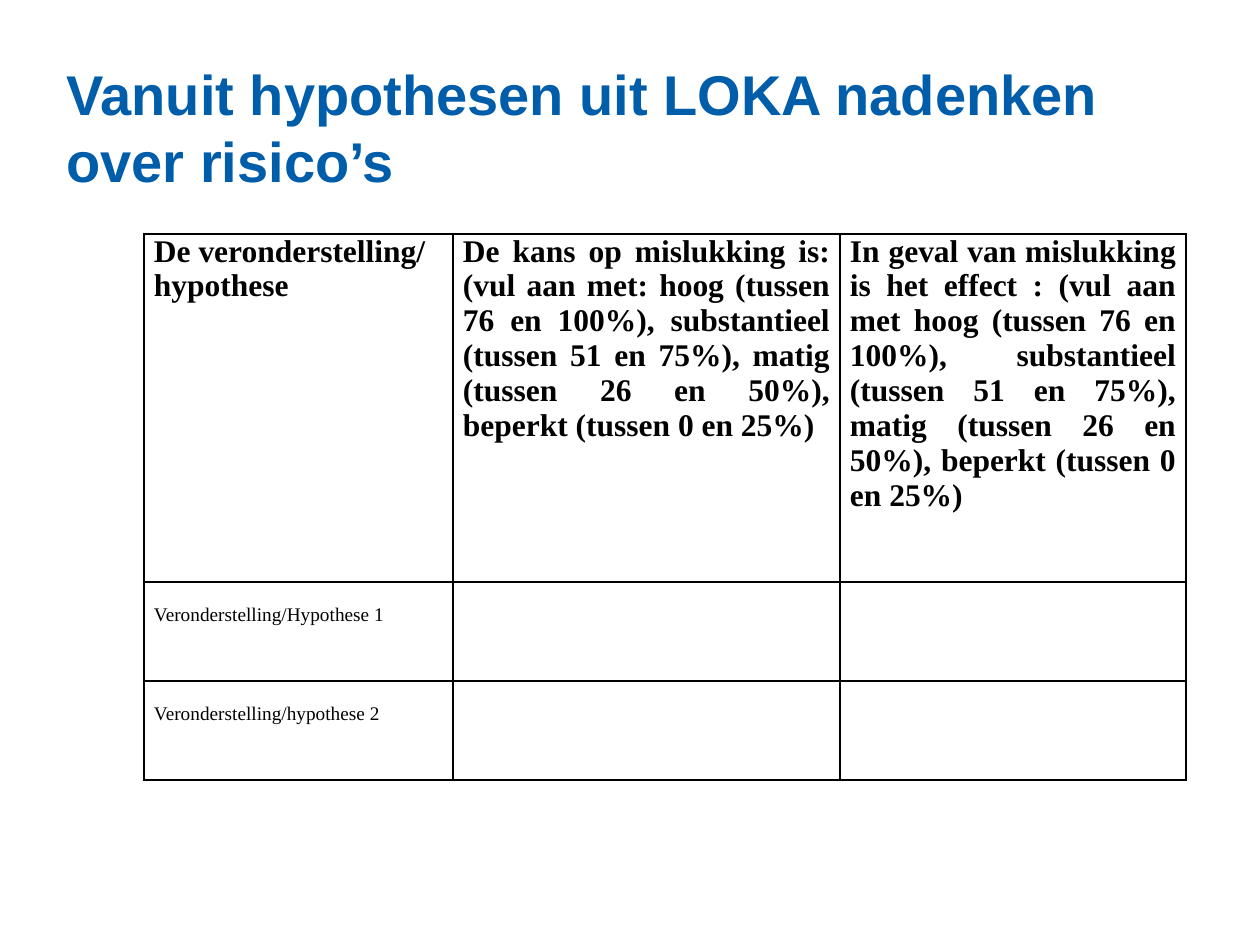
"""Build a slide with a risk table for the hypotheses from LOKA."""
from dataclasses import dataclass

import pptx
import pptx.dml.color
import pptx.enum.text
import pptx.oxml
import pptx.oxml.ns
import pptx.util

EMU_PER_PX = 914400 / 126


@dataclass(frozen=True)
class Theme:
    title_color: str = "005DAA"
    text_color: str = "000000"
    border_color: str = "000000"
    title_font: str = "Arial"
    table_font: str = "Times New Roman"
    title_size: int = 32
    header_size: int = 18
    label_size: int = 11
    border_width: int = 1


@dataclass(frozen=True)
class Row:
    height: int
    cells: tuple[str, ...]
    size: int
    bold: bool = False
    margin_top: int = 0
    align: pptx.enum.text.PP_ALIGN = pptx.enum.text.PP_ALIGN.JUSTIFY


THEME = Theme()
COLUMN_WIDTHS = (309, 387, 346)
CELL_MARGIN = 10
SCALE = (
    "hoog (tussen 76 en 100%), substantieel (tussen 51 en 75%), "
    "matig (tussen 26 en 50%), beperkt (tussen 0 en 25%)"
)
ROWS = (
    Row(348, (
        "De veronderstelling/\nhypothese",
        f"De kans op mislukking is: (vul aan met: {SCALE}",
        f"In geval van mislukking is het effect : (vul aan met {SCALE}",
    ), THEME.header_size, bold=True),
    Row(99, ("Veronderstelling/Hypothese 1", "", ""), THEME.label_size, margin_top=22),
    Row(99, ("Veronderstelling/hypothese 2", "", ""), THEME.label_size, margin_top=22),
)


def px(length: int) -> pptx.util.Emu:
    return pptx.util.Emu(round(length * EMU_PER_PX))


def write_text(frame, text: str, *, font: str, size: int, color: str, bold: bool,
               align=pptx.enum.text.PP_ALIGN.LEFT) -> None:
    for index, line in enumerate(text.split("\n")):
        para = frame.add_paragraph() if index else frame.paragraphs[0]
        para.alignment = align
        para.font.size = pptx.util.Pt(size)
        if not line:
            continue
        span = para.add_run()
        span.text = line
        span.font.name = font
        span.font.size = pptx.util.Pt(size)
        span.font.bold = bold
        span.font.color.rgb = pptx.dml.color.RGBColor.from_string(color)


def set_borders(cell) -> None:
    properties = cell._tc.get_or_add_tcPr()
    namespace = pptx.oxml.ns.nsdecls("a")
    width = pptx.util.Pt(THEME.border_width)
    for position, side in enumerate(("lnL", "lnR", "lnT", "lnB")):
        properties.insert(position, pptx.oxml.parse_xml(
            f'<a:{side} {namespace} w="{width}"><a:solidFill>'
            f'<a:srgbClr val="{THEME.border_color}"/></a:solidFill></a:{side}>'
        ))


def add_title(page, text: str) -> None:
    box = page.shapes.add_textbox(px(54), px(106), px(1184), px(94))
    frame = box.text_frame
    frame.word_wrap = True
    frame.vertical_anchor = pptx.enum.text.MSO_ANCHOR.BOTTOM
    write_text(frame, text, font=THEME.title_font, size=THEME.title_size,
               color=THEME.title_color, bold=True)


def add_risk_table(page, rows: tuple[Row, ...]) -> None:
    shape = page.shapes.add_table(
        len(rows), len(COLUMN_WIDTHS), px(144), px(234),
        px(sum(COLUMN_WIDTHS)), px(sum(row.height for row in rows)),
    )
    table = shape.table
    table.first_row = False
    table.horz_banding = False
    for column, width in zip(table.columns, COLUMN_WIDTHS):
        column.width = px(width)
    for row_index, row in enumerate(rows):
        table.rows[row_index].height = px(row.height)
        for column_index, text in enumerate(row.cells):
            cell = table.cell(row_index, column_index)
            cell.fill.background()
            cell.margin_left = cell.margin_right = px(CELL_MARGIN)
            cell.margin_top = px(row.margin_top)
            cell.margin_bottom = 0
            set_borders(cell)
            write_text(cell.text_frame, text, font=THEME.table_font, size=row.size,
                       color=THEME.text_color, bold=row.bold, align=row.align)


def main() -> None:
    deck = pptx.Presentation()
    deck.slide_width, deck.slide_height = px(1260), px(945)
    page = deck.slides.add_slide(deck.slide_layouts[6])
    add_title(page, "Vanuit hypothesen uit LOKA nadenken over risico’s")
    add_risk_table(page, ROWS)
    deck.save("out.pptx")


if __name__ == "__main__":
    main()
